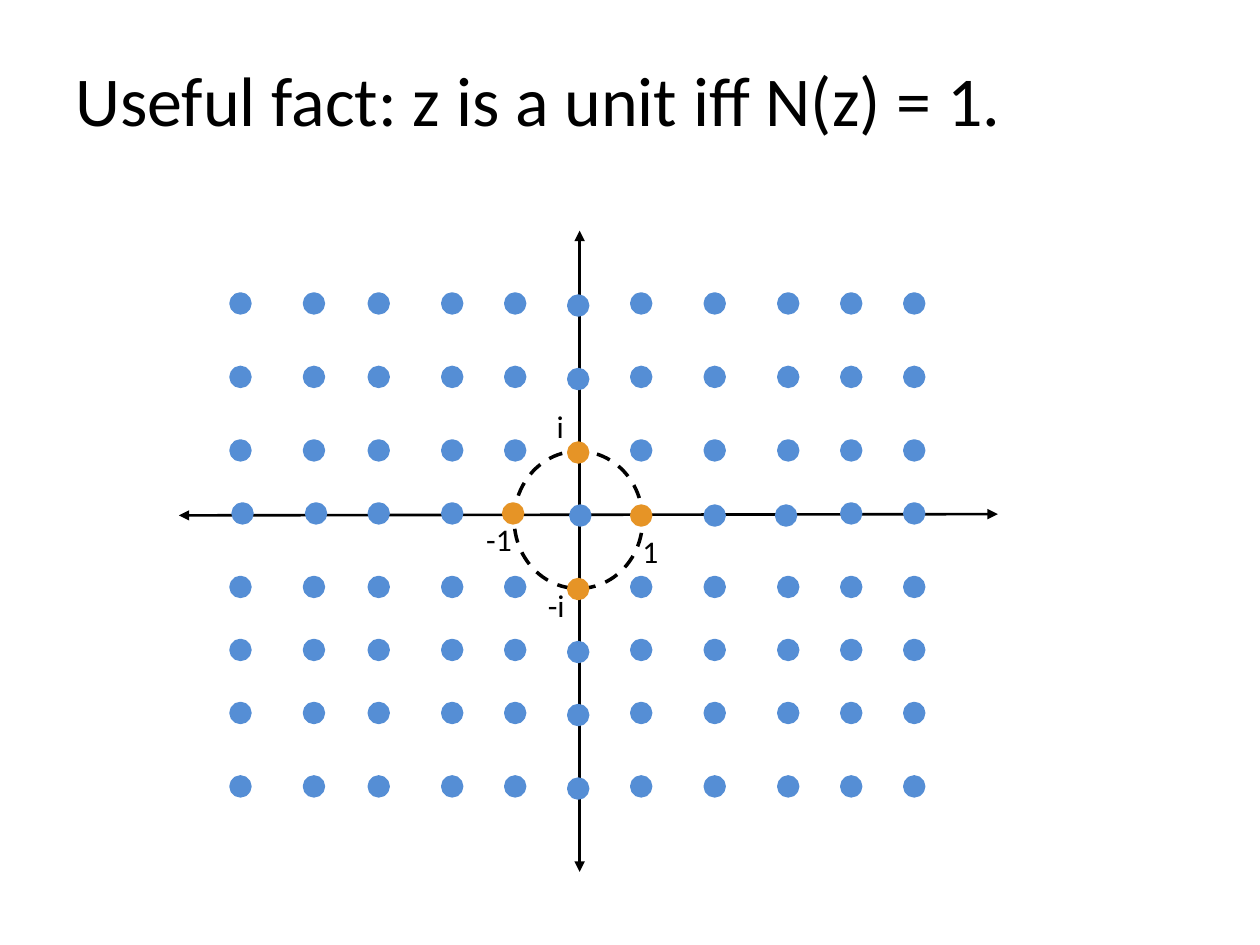
from dataclasses import dataclass
from itertools import accumulate

from lxml.etree import SubElement
from pptx import Presentation
from pptx.dml.color import RGBColor
from pptx.enum.dml import MSO_LINE
from pptx.enum.shapes import MSO_CONNECTOR, MSO_SHAPE
from pptx.enum.text import MSO_ANCHOR, MSO_AUTO_SIZE, PP_ALIGN
from pptx.oxml.ns import qn
from pptx.util import Pt


@dataclass(frozen=True)
class Theme:
    font: str = "Calibri"
    ink: RGBColor = RGBColor(0x00, 0x00, 0x00)
    point: RGBColor = RGBColor(0x55, 0x8E, 0xD5)
    unit: RGBColor = RGBColor(0xE6, 0x94, 0x26)
    title: int = 40
    label: int = 18


THEME = Theme()

# Lattice: left edges and top edges of the dots, from the gaps between them
DOT = 10.8
COLS = list(accumulate([132, 42, 37, 42, 36, 36, 36, 42, 42, 36, 36]))
ROWS = list(accumulate([168, 42, 42, 36, 42, 36, 36, 42]))
MID_COL, MID_ROW = 5, 3
UNITS = {(4, 3), (6, 3), (5, 2), (5, 4)}

# Dots on the axes sit slightly off the lattice
NUDGE = 1.2
RIGHT = {0, 1, MID_COL}
LEFT = {4, 8}
LOW = range(5, 9)


def set_box(shape, left, top, width, height):
    shape.left, shape.top = Pt(left), Pt(top)
    shape.width, shape.height = Pt(width), Pt(height)


def set_text(shape, text, size):
    frame = shape.text_frame
    frame.text = text
    frame.word_wrap = False
    frame.auto_size = MSO_AUTO_SIZE.SHAPE_TO_FIT_TEXT
    frame.vertical_anchor = MSO_ANCHOR.TOP
    line = frame.paragraphs[0]
    line.alignment = PP_ALIGN.LEFT
    font = line.runs[0].font
    font.name, font.size = THEME.font, Pt(size)
    font.color.rgb = THEME.ink


def add_label(slide, text, left, top, width):
    box = slide.shapes.add_textbox(Pt(left), Pt(top), Pt(width), Pt(29))
    set_text(box, text, THEME.label)


def add_oval(slide, left, top, width, height, color):
    oval = slide.shapes.add_shape(
        MSO_SHAPE.OVAL, Pt(left), Pt(top), Pt(width), Pt(height))
    oval.shadow.inherit = False
    oval.line.color.rgb = color
    oval.line.width = Pt(2)
    return oval


def add_ring(slide):
    ring = add_oval(slide, 293.8, 257.8, 73.4, 78.5, THEME.ink)
    ring.fill.background()
    ring.line.dash_style = MSO_LINE.DASH


def add_axis(slide, *ends):
    axis = slide.shapes.add_connector(
        MSO_CONNECTOR.STRAIGHT, *(Pt(end) for end in ends))
    axis.line.color.rgb = THEME.ink
    axis.line.width = Pt(1.5)
    stroke = axis.line._get_or_add_ln()
    for tag in ("a:headEnd", "a:tailEnd"):
        SubElement(stroke, qn(tag), type="triangle")
    SubElement(axis._element.spPr, qn("a:effectLst"))


def add_dot(slide, col, row):
    left, top = COLS[col], ROWS[row]
    if row == MID_ROW:
        left += NUDGE * ((col in RIGHT) - (col in LEFT))
        top += NUDGE * (col in LOW)
    elif col == MID_COL:
        top += NUDGE
    color = THEME.unit if (col, row) in UNITS else THEME.point
    dot = add_oval(slide, left, top, DOT, DOT, color)
    dot.fill.solid()
    dot.fill.fore_color.rgb = color


def main():
    deck = Presentation()
    deck.slide_width, deck.slide_height = Pt(720), Pt(540)
    slide = deck.slides.add_slide(deck.slide_layouts[5])

    # Title
    title = slide.shapes.title
    set_box(title, 36, 28.8, 548.6, 55.4)
    set_text(title, "Useful fact: z is a unit iff N(z) = 1.", THEME.title)

    # Unit circle and axes
    add_ring(slide)
    add_axis(slide, 102.2, 294.5, 570.2, 293.8)
    add_axis(slide, 331.2, 498.2, 331.2, 131.8)

    # Gaussian integers
    for row in range(len(ROWS)):
        for col in range(len(COLS)):
            add_dot(slide, col, row)

    # Names of the units
    add_label(slide, "1", 360, 300.2, 23.8)
    add_label(slide, "-1", 270.7, 293.8, 29.5)
    add_label(slide, "-i", 306, 331.2, 24.5)
    add_label(slide, "i", 311, 229, 18.7)

    deck.save("out.pptx")


if __name__ == "__main__":
    main()
